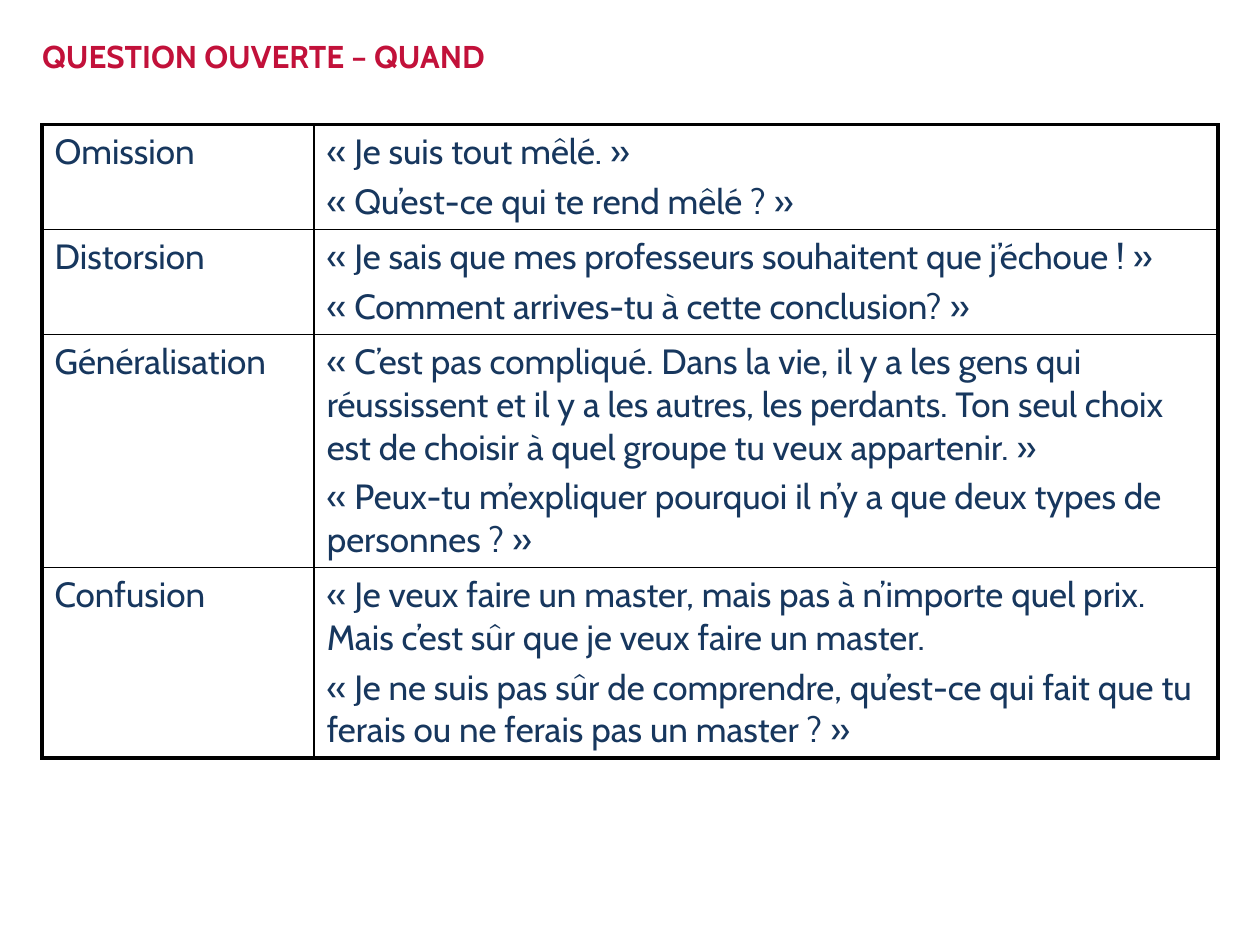
from dataclasses import dataclass

from lxml import etree
from pptx import Presentation
from pptx.dml.color import RGBColor
from pptx.enum.text import MSO_ANCHOR, MSO_AUTO_SIZE, PP_ALIGN
from pptx.oxml.ns import qn
from pptx.util import Inches, Pt

LEFT = PP_ALIGN.LEFT
TOP = MSO_ANCHOR.TOP
NO_FIT = MSO_AUTO_SIZE.NONE
TITLE_ONLY = 5


@dataclass(frozen=True)
class Theme:
    font: str = "Cabin"
    heading: str = "C2113A"
    text: str = "17375E"
    border: str = "000000"
    heading_size: float = 18
    text_size: float = 20
    reply_gap: float = 4
    outer_line: float = 2.25
    inner_line: float = 1


@dataclass(frozen=True)
class Exchange:
    category: str
    statement: str
    question: str
    height: float


THEME = Theme()
WIDTH, HEIGHT = 10, 7.5
MARGIN = WIDTH / 30
CONTENT_WIDTH = WIDTH - 2 * MARGIN
HEADING_TOP, HEADING_HEIGHT = 0.29, 0.76
GRID_TOP = 0.99
CATEGORY_WIDTH = 2.16
PAD_X, PAD_Y = 0.1, 0.05

EXCHANGES = [
    Exchange("Omission", "« Je suis tout mêlé. »", "« Qu’est-ce qui te rend mêlé ? »", 0.75),
    Exchange(
        "Distorsion",
        "« Je sais que mes professeurs souhaitent que j’échoue ! »",
        "« Comment arrives-tu à cette conclusion? »",
        0.73,
    ),
    Exchange(
        "Généralisation",
        "« C’est pas compliqué. Dans la vie, il y a les gens qui réussissent et il y a les "
        "autres, les perdants. Ton seul choix est de choisir à quel groupe tu veux appartenir. »",
        "« Peux-tu m’expliquer pourquoi il n’y a que deux types de personnes ? »",
        1.49,
    ),
    Exchange(
        "Confusion",
        "« Je veux faire un master, mais pas à n’importe quel prix. "
        "Mais c’est sûr que je veux faire un master.",
        "« Je ne suis pas sûr de comprendre, qu’est-ce qui fait que tu ferais "
        "ou ne ferais pas un master ? »",
        1.49,
    ),
]


def add_text(paragraph, words: str, size: float, color: str, bold: bool = False) -> None:
    paragraph.alignment = LEFT
    run = paragraph.add_run()
    run.text = words
    run.font.name = THEME.font
    run.font.size = Pt(size)
    run.font.bold = bold
    run.font.color.rgb = RGBColor.from_string(color)


def set_margins(holder, x: float, y: float) -> None:
    holder.margin_left = holder.margin_right = Inches(x)
    holder.margin_top = holder.margin_bottom = Inches(y)
    holder.vertical_anchor = TOP


def draw_borders(cell, outer_sides: dict[str, bool]) -> None:
    properties = cell._tc.get_or_add_tcPr()
    for position, (side, outer) in enumerate(outer_sides.items()):
        width = THEME.outer_line if outer else THEME.inner_line
        line = etree.Element(qn(f"a:ln{side}"), w=str(int(Pt(width))), cmpd="sng")
        fill = etree.SubElement(line, qn("a:solidFill"))
        etree.SubElement(fill, qn("a:srgbClr"), val=THEME.border)
        properties.insert(position, line)


def fill_cell(cell, passages: list[str]) -> None:
    set_margins(cell, PAD_X, PAD_Y)
    cell.fill.background()
    frame = cell.text_frame
    for index, passage in enumerate(passages):
        paragraph = frame.add_paragraph() if index else frame.paragraphs[0]
        paragraph.space_before = Pt(THEME.reply_gap if index else 0)
        add_text(paragraph, passage, THEME.text_size, THEME.text)


def add_heading(slide, words: str) -> None:
    heading = slide.shapes.title
    heading.left, heading.top = Inches(MARGIN), Inches(HEADING_TOP)
    heading.width, heading.height = Inches(CONTENT_WIDTH), Inches(HEADING_HEIGHT)
    frame = heading.text_frame
    frame.auto_size = NO_FIT
    frame.word_wrap = True
    set_margins(frame, 0, 0)
    add_text(frame.paragraphs[0], words, THEME.heading_size, THEME.heading, bold=True)


def add_exchanges(slide, exchanges: list[Exchange]) -> None:
    total_height = sum(exchange.height for exchange in exchanges)
    grid = slide.shapes.add_table(
        len(exchanges), 2, Inches(MARGIN), Inches(GRID_TOP),
        Inches(CONTENT_WIDTH), Inches(total_height),
    ).table
    grid.first_row = grid.horz_banding = False
    grid.columns[0].width = Inches(CATEGORY_WIDTH)
    grid.columns[1].width = Inches(CONTENT_WIDTH - CATEGORY_WIDTH)
    last_row = len(exchanges) - 1
    for row, exchange in enumerate(exchanges):
        grid.rows[row].height = Inches(exchange.height)
        contents = [[exchange.category], [exchange.statement, exchange.question]]
        for column, passages in enumerate(contents):
            cell = grid.cell(row, column)
            fill_cell(cell, passages)
            draw_borders(
                cell,
                {"L": column == 0, "R": column == 1, "T": row == 0, "B": row == last_row},
            )


def main() -> None:
    deck = Presentation()
    deck.slide_width, deck.slide_height = Inches(WIDTH), Inches(HEIGHT)
    slide = deck.slides.add_slide(deck.slide_layouts[TITLE_ONLY])
    add_heading(slide, "QUESTION OUVERTE – QUAND")
    add_exchanges(slide, EXCHANGES)
    deck.save("out.pptx")


if __name__ == "__main__":
    main()
